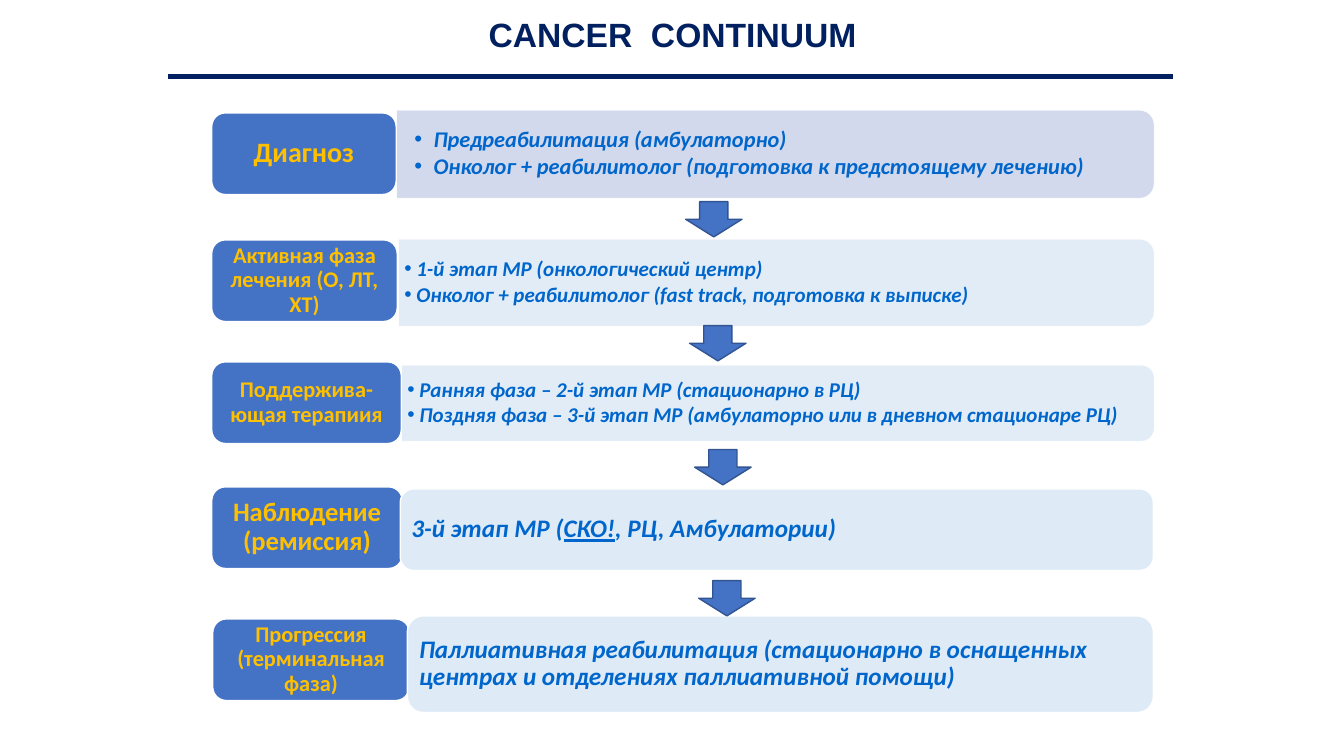
from lxml.etree import SubElement
from pptx import Presentation
from pptx.dml.color import RGBColor
from pptx.enum.shapes import MSO_CONNECTOR, MSO_SHAPE as Preset
from pptx.enum.text import MSO_ANCHOR as Anchor, PP_ALIGN as Align
from pptx.oxml.ns import qn
from pptx.util import Inches, Pt

COLORS = {
    "navy": "002060",
    "stage": "4472C4",
    "arrow_edge": "325491",
    "lavender": "CFD5EA",
    "pale": "DEEBF7",
    "white": "FFFFFF",
    "gold": "FFC000",
    "link_blue": "0066CC",
}
LABEL_HEIGHT = 0.81
ARROW_SIZE = (0.56, 0.35)
PANEL_OPACITY = 90

STAGES = [
    ((2.1, 1.12, 1.83), "Диагноз", 20),
    ((2.1, 2.38, 1.84), "Активная фаза лечения (О, ЛТ, ХТ)", 16),
    ((2.1, 3.59, 1.88), "Поддержива-ющая терапиия", 16),
    ((2.1, 4.83, 1.89), "Наблюдение (ремиссия)", 19),
    ((2.11, 6.14, 1.95), "Прогрессия (терминальная фаза)", 16),
]
BULLET_PANELS = [
    ((3.93, 1.09, 7.52, 0.88), "lavender", 16, 0.18, 0.19,
     ["Предреабилитация (амбулаторно)",
      "Онколог + реабилитолог (подготовка к предстоящему лечению)"]),
    ((3.95, 2.37, 7.5, 0.87), "pale", 15, 0.06, 0.12,
     ["1-й этап МР (онкологический центр)",
      "Онколог + реабилитолог (fast track, подготовка к выписке)"]),
    ((3.98, 3.62, 7.47, 0.76), "pale", 15, 0.06, 0.12,
     ["Ранняя фаза – 2-й этап МР (стационарно в РЦ)",
      "Поздняя фаза – 3-й этап МР (амбулаторно или в дневном стационаре РЦ)"]),
]
PLAIN_PANELS = [
    ((3.97, 4.85, 7.47, 0.81),
     [("3-й этап МР (", False), ("СКО!", True), (", РЦ, Амбулатории)", False)]),
    ((4.04, 6.11, 7.4, 0.96),
     [("Паллиативная реабилитация (стационарно в оснащенных "
       "центрах и отделениях паллиативной помощи)", False)]),
]
ARROWS = [(6.8, 2), (6.84, 3.23), (6.89, 4.46), (6.93, 5.76)]


def rgb(name):
    return RGBColor.from_string(COLORS[name])


def apply_format(target, values):
    for attribute, value in values.items():
        setattr(target, attribute, value)


def add_block(slide, preset, bounds, fill, edge="white"):
    block = slide.shapes.add_shape(preset, *map(Inches, bounds))
    block.shadow.inherit = False
    block.fill.solid()
    block.fill.fore_color.rgb = rgb(fill)
    block.line.color.rgb = rgb(edge)
    block.line.width = Pt(1)
    return block


def prepare_frame(holder, side, edge):
    frame = holder.text_frame
    apply_format(frame, {
        "word_wrap": True,
        "vertical_anchor": Anchor.MIDDLE,
        "margin_left": Inches(side),
        "margin_right": Inches(side),
        "margin_top": Inches(edge),
        "margin_bottom": Inches(edge),
    })
    return frame


def write_runs(paragraph, runs, size, color, align=Align.LEFT, italic=False, face="Calibri"):
    apply_format(paragraph, {"alignment": align, "line_spacing": 0.9})
    for text, underline in runs:
        run = paragraph.add_run()
        run.text = text
        apply_format(run.font, {
            "name": face, "size": Pt(size), "bold": True,
            "italic": italic, "underline": underline,
        })
        run.font.color.rgb = rgb(color)


def add_bullet(paragraph, indent):
    properties = paragraph._p.get_or_add_pPr()
    properties.set("marL", str(Inches(indent)))
    properties.set("indent", str(-Inches(indent)))
    SubElement(properties, qn("a:buFont"), typeface="Arial")
    SubElement(properties, qn("a:buChar"), char="•")


def set_opacity(block, percent):
    for color in block._element.spPr.iter(qn("a:srgbClr")):
        SubElement(color, qn("a:alpha"), val=str(percent * 1000))


def add_title(slide):
    title = slide.shapes.add_textbox(*map(Inches, (1.67, 0, 10, 0.73)))
    frame = prepare_frame(title, 0.1, 0.05)
    write_runs(frame.paragraphs[0], [("CANCER  CONTINUUM", False)], 24, "navy",
               Align.CENTER, face="Arial")


def add_title_rule(slide):
    rule = slide.shapes.add_connector(
        MSO_CONNECTOR.STRAIGHT, *map(Inches, (1.67, 0.76, 11.63, 0.76)))
    rule.line.color.rgb = rgb("navy")
    rule.line.width = Pt(4)
    SubElement(rule._element.spPr, qn("a:effectLst"))


def add_bullet_panel(slide, bounds, fill, size, inset, indent, points):
    left, top, width, height = bounds
    turned = (left + (width - height) / 2, top + (height - width) / 2, height, width)
    panel = add_block(slide, Preset.ROUND_2_SAME_RECTANGLE, turned, fill)
    panel.rotation = 90
    set_opacity(panel, PANEL_OPACITY)

    body = slide.shapes.add_textbox(
        *map(Inches, (left, top + 0.04, width - 0.04, height - 0.08)))
    frame = prepare_frame(body, inset, inset / 2)
    for index, point in enumerate(points):
        paragraph = frame.add_paragraph() if index else frame.paragraphs[0]
        add_bullet(paragraph, indent)
        apply_format(paragraph, {"level": 1, "space_after": Pt(2)})
        write_runs(paragraph, [(point, False)], size, "link_blue", italic=True)


def add_stage(slide, place, name, size):
    stage = add_block(slide, Preset.ROUNDED_RECTANGLE, (*place, LABEL_HEIGHT), "stage")
    frame = prepare_frame(stage, 0.07, 0.03)
    write_runs(frame.paragraphs[0], [(name, False)], size, "gold", Align.CENTER)


def add_plain_panel(slide, bounds, runs):
    panel = add_block(slide, Preset.ROUNDED_RECTANGLE, bounds, "pale")
    frame = prepare_frame(panel, 0.07, 0.04)
    write_runs(frame.paragraphs[0], runs, 18, "link_blue", italic=True)


def main():
    deck = Presentation()
    deck.slide_width, deck.slide_height = Inches(13.33), Inches(7.5)
    slide = deck.slides.add_slide(deck.slide_layouts[6])
    add_title(slide)
    for panel in BULLET_PANELS:
        add_bullet_panel(slide, *panel)
    for stage in STAGES:
        add_stage(slide, *stage)
    for panel in PLAIN_PANELS:
        add_plain_panel(slide, *panel)
    for place in ARROWS:
        add_block(slide, Preset.DOWN_ARROW, (*place, *ARROW_SIZE), "stage", "arrow_edge")
    add_title_rule(slide)
    deck.save("out.pptx")


if __name__ == "__main__":
    main()
